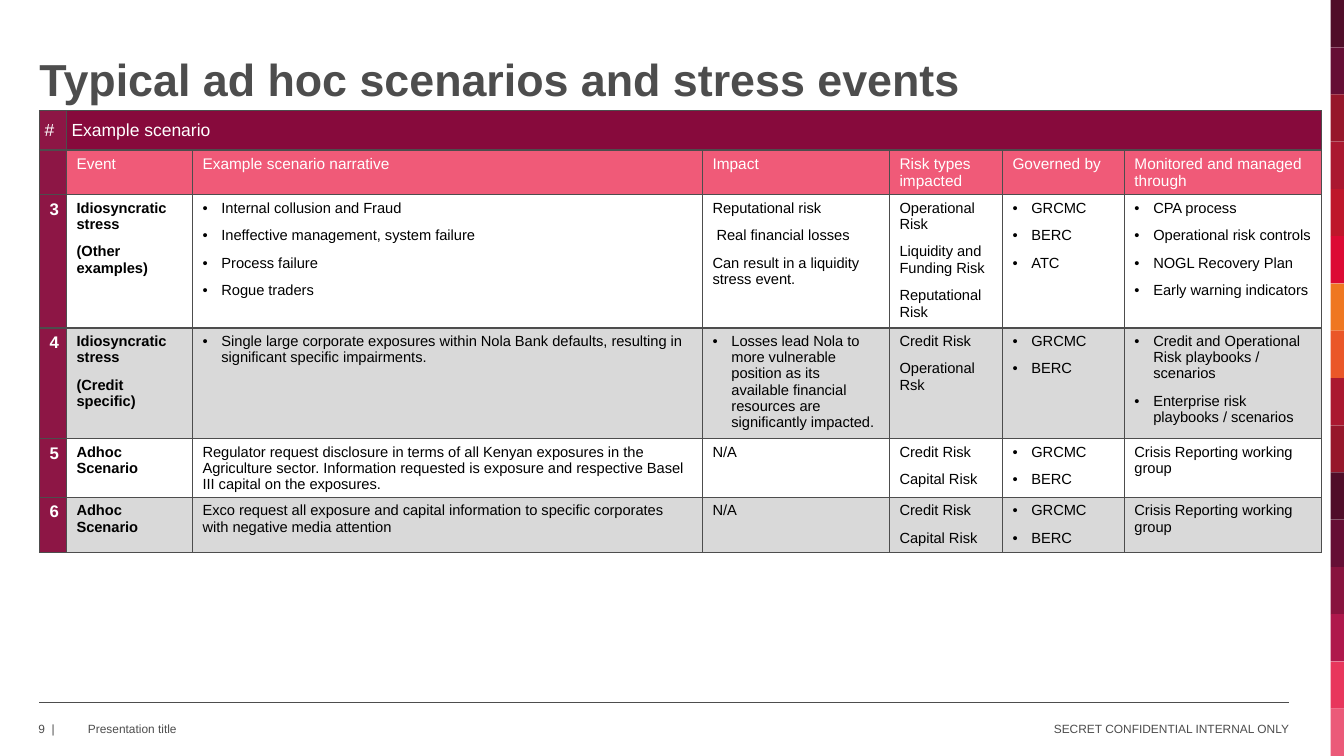
import pptx
import pptx.dml.color
import pptx.enum.shapes
import pptx.enum.text
import pptx.oxml
import pptx.oxml.ns
import pptx.util

Pt = pptx.util.Pt
PP_ALIGN = pptx.enum.text.PP_ALIGN
ANCHOR = pptx.enum.text.MSO_ANCHOR
FONT = "Arial"
COLORS = {
    "text": "4D4D4D", "black": "000000", "white": "FFFFFF", "grey": "D9D9D9",
    "number": "8D1645", "banner": "870A3C", "header": "F05A78",
}
STRIP = ["500D29", "650E35", "96172B", "AA1830", "BE172B", "DC0A34", "EF7721", "EA5728",
         "AA1830", "96172B", "500D29", "650E35", "88133E", "AF184C", "E8365C", "EB5A79"]

COL_WIDTHS = [19.3, 90, 364.3, 133.6, 80.7, 87.1, 140.8]
ROW_HEIGHTS = [28, 32, 93, 77, 42, 39]
HEADERS = ["Event", "Example scenario narrative", "Impact", "Risk types impacted",
           "Governed by", "Monitored and managed through"]
# A leading "•" marks a bulleted paragraph
SCENARIOS = [
    [["3"],
     ["Idiosyncratic  stress", "(Other examples)"],
     ["•Internal collusion and Fraud", "•Ineffective management, system failure",
      "•Process failure", "•Rogue traders"],
     ["Reputational risk", " Real financial losses", "Can result in a liquidity stress event."],
     ["Operational Risk", "Liquidity and Funding Risk", "Reputational Risk"],
     ["•GRCMC", "•BERC", "•ATC"],
     ["•CPA process", "•Operational risk controls", "•NOGL Recovery Plan",
      "•Early warning indicators"]],
    [["4"],
     ["Idiosyncratic stress", "(Credit specific)"],
     ["•Single large corporate exposures within Nola Bank defaults, resulting in "
      "significant specific impairments."],
     ["•Losses lead Nola to more vulnerable position as its available financial "
      "resources are significantly impacted."],
     ["Credit Risk", "Operational Rsk"],
     ["•GRCMC", "•BERC"],
     ["•Credit and Operational Risk playbooks / scenarios",
      "•Enterprise risk playbooks / scenarios"]],
    [["5"],
     ["Adhoc Scenario"],
     ["Regulator request disclosure in terms of all Kenyan exposures in the Agriculture sector. "
      "Information requested is exposure and respective Basel III capital on the exposures."],
     ["N/A"],
     ["Credit Risk", "Capital Risk"],
     ["•GRCMC", "•BERC"],
     ["Crisis Reporting working group"]],
    [["6"],
     ["Adhoc Scenario"],
     ["Exco request all exposure and capital information to specific corporates "
      "with negative media attention"],
     ["N/A"],
     ["Credit Risk", "Capital Risk"],
     ["•GRCMC", "•BERC"],
     ["Crisis Reporting working group"]],
]


def rgb(name):
    return pptx.dml.color.RGBColor.from_string(COLORS.get(name, name))


def set_attrs(obj, values):
    for name, value in values.items():
        setattr(obj, name, value)


def set_margins(obj, left, top, right, bottom):
    set_attrs(obj, {"margin_left": Pt(left), "margin_top": Pt(top),
                    "margin_right": Pt(right), "margin_bottom": Pt(bottom)})


def write(p, text, size, color, bold=False):
    r = p.add_run()
    r.text = text
    set_attrs(r.font, {"name": FONT, "size": Pt(size), "bold": bold})
    r.font.color.rgb = rgb(color)


def add_bullet(p):
    pPr = p._p.get_or_add_pPr()
    indent = Pt(13.5)
    pPr.set("marL", str(indent))
    pPr.set("indent", str(-indent))
    for tag in (f'buFont {pptx.oxml.ns.nsdecls("a")} typeface="{FONT}"',
                f'buChar {pptx.oxml.ns.nsdecls("a")} char="•"'):
        pPr.append(pptx.oxml.parse_xml(f"<a:{tag}/>"))


def set_borders(cell):
    tcPr = cell._tc.get_or_add_tcPr()
    for i, side in enumerate(("lnL", "lnR", "lnT", "lnB")):
        tcPr.insert(i, pptx.oxml.parse_xml(
            f'<a:{side} {pptx.oxml.ns.nsdecls("a")} w="{Pt(1)}"><a:solidFill>'
            f'<a:srgbClr val="{COLORS["text"]}"/></a:solidFill></a:{side}>'))


def fill_cell(cell, paras, fill, size, color, bold=False, space=0):
    cell.fill.solid()
    cell.fill.fore_color.rgb = rgb(fill)
    set_margins(cell, 7.2, 3.6, 7.2, 0)
    for i, text in enumerate(paras):
        p = cell.text_frame.add_paragraph() if i else cell.text_frame.paragraphs[0]
        p.space_after = Pt(space)
        if text.startswith("•"):
            add_bullet(p)
        write(p, text.lstrip("•"), size, color, bold)


def add_title(slide, x, y, w, h):
    sp = slide.shapes.title
    set_attrs(sp, {"left": Pt(x), "top": Pt(y), "width": Pt(w), "height": Pt(h)})
    tf = sp.text_frame
    set_attrs(tf, {"vertical_anchor": ANCHOR.BOTTOM, "word_wrap": True,
                   "auto_size": pptx.enum.text.MSO_AUTO_SIZE.NONE})
    set_margins(tf, 0, 3.6, 7.2, 3.6)
    p = tf.paragraphs[0]
    set_attrs(p, {"alignment": PP_ALIGN.LEFT, "line_spacing": 0.9})
    write(p, "Typical ad hoc scenarios and stress events", 32, "text", True)


def add_strip(slide, x, y, w, h):
    step = h / len(STRIP)
    for i, color in enumerate(STRIP):
        sp = slide.shapes.add_shape(pptx.enum.shapes.MSO_SHAPE.RECTANGLE,
                                    Pt(x), Pt(y + i * step), Pt(w), Pt(step))
        sp.shadow.inherit = False
        sp.fill.solid()
        sp.fill.fore_color.rgb = rgb(color)
        sp.line.fill.background()


def add_scenarios(slide, x, y):
    frame = slide.shapes.add_table(len(ROW_HEIGHTS), len(COL_WIDTHS), Pt(x), Pt(y),
                                   Pt(sum(COL_WIDTHS)), Pt(sum(ROW_HEIGHTS)))
    table = frame.table
    set_attrs(table, {"first_row": False, "horz_banding": False})
    for col, width in zip(table.columns, COL_WIDTHS):
        col.width = Pt(width)
    for row, height in zip(table.rows, ROW_HEIGHTS):
        row.height = Pt(height)

    # Banner row and column headers
    table.cell(0, 1).merge(table.cell(0, len(COL_WIDTHS) - 1))
    for c, (text, fill) in enumerate([("#", "number"), ("Example scenario", "banner")]):
        cell = table.cell(0, c)
        fill_cell(cell, [text], fill, 12.5, "white")
        set_margins(cell, 3.6, 0.7, 3.6, 0.7)
        cell.vertical_anchor = ANCHOR.MIDDLE
    fill_cell(table.cell(1, 0), [], "number", 11, "white")
    for c, text in enumerate(HEADERS, 1):
        fill_cell(table.cell(1, c), [text], "header", 11, "white")

    # Scenario rows, alternately shaded
    for r, scenario in enumerate(SCENARIOS, 2):
        band = "grey" if r % 2 else "white"
        for c, paras in enumerate(scenario):
            style = ("number", 12, "white") if c == 0 else (band, 10.5, "black")
            fill_cell(table.cell(r, c), paras, *style, bold=c < 2, space=8)
    for cell in table.iter_cells():
        set_borders(cell)


def add_footer(slide, x, y, w):
    line = slide.shapes.add_connector(pptx.enum.shapes.MSO_CONNECTOR.STRAIGHT,
                                      Pt(x), Pt(y), Pt(x + w), Pt(y))
    line.line.color.rgb = rgb("text")
    line.line.width = Pt(1)
    line._element.spPr.append(
        pptx.oxml.parse_xml(f'<a:effectLst {pptx.oxml.ns.nsdecls("a")}/>'))
    labels = [("9  |", -0.7, 32, PP_ALIGN.LEFT),
              ("Presentation title", 34.6, 397, PP_ALIGN.LEFT),
              ("SECRET CONFIDENTIAL INTERNAL ONLY", w - 397, 397, PP_ALIGN.RIGHT)]
    for text, dx, width, align in labels:
        sp = slide.shapes.add_textbox(Pt(x + dx), Pt(y + 13), Pt(width), Pt(12.2))
        tf = sp.text_frame
        set_attrs(tf, {"word_wrap": True, "vertical_anchor": ANCHOR.MIDDLE})
        set_margins(tf, 0, 0, 0, 0)
        p = tf.paragraphs[0]
        p.alignment = align
        write(p, text, 8.5, "text")


def main():
    prs = pptx.Presentation()
    set_attrs(prs, {"slide_width": Pt(960), "slide_height": Pt(540)})
    slide = prs.slides.add_slide(prs.slide_layouts[5])
    add_strip(slide, 950.5, 0, 10, 540)
    add_footer(slide, 28.2, 501.8, 892.6)
    add_scenarios(slide, 28.2, 79.2)
    add_title(slide, 28.2, 23, 892.6, 56.2)
    prs.save("out.pptx")


if __name__ == "__main__":
    main()
